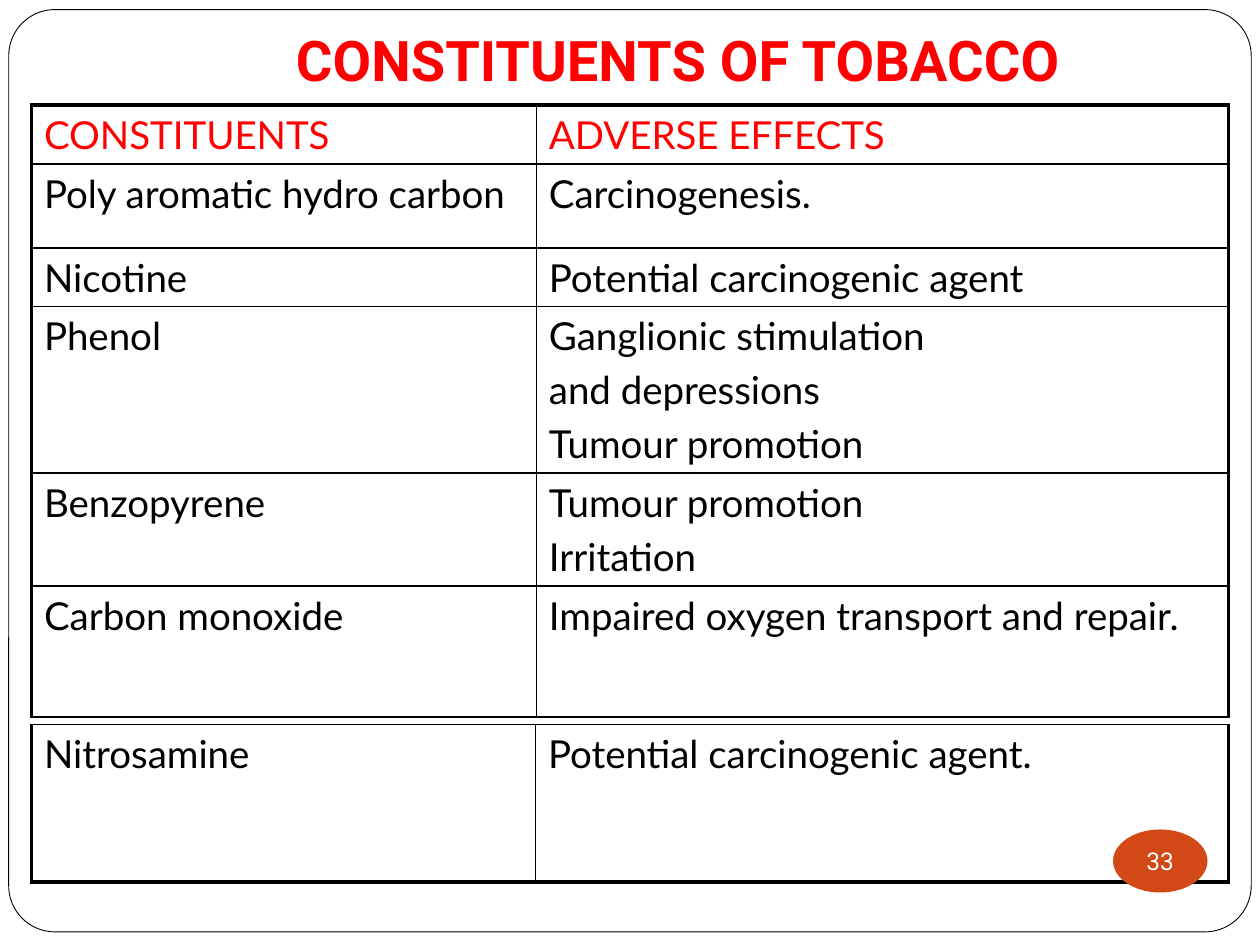
from lxml import etree
from pptx import Presentation
from pptx.dml.color import RGBColor
from pptx.enum.shapes import MSO_SHAPE
from pptx.enum.text import MSO_ANCHOR, MSO_AUTO_SIZE, PP_ALIGN
from pptx.oxml.ns import qn
from pptx.util import Pt

ROUNDED, OVAL = MSO_SHAPE.ROUNDED_RECTANGLE, MSO_SHAPE.OVAL
BOTTOM, MIDDLE = MSO_ANCHOR.BOTTOM, MSO_ANCHOR.MIDDLE
CENTER = PP_ALIGN.CENTER
NO_AUTOFIT = MSO_AUTO_SIZE.NONE

COLORS = {"paper": "FFFFFF", "ink": "000000", "heading": "FF0000", "badge": "D34817"}
HEADING_FONT, TABLE_FONT = "Roboto", "Lato"
OUTER, INNER = 2.25, 1

HEADER = ("CONSTITUENTS", ["ADVERSE EFFECTS"])
EFFECTS = [
    HEADER,
    ("Poly aromatic hydro carbon", ["Carcinogenesis."]),
    ("Nicotine", ["Potential carcinogenic agent"]),
    ("Phenol", ["Ganglionic stimulation", "and depressions", "Tumour promotion"]),
    ("Benzopyrene", ["Tumour promotion", "Irritation"]),
    ("Carbon monoxide", ["Impaired oxygen transport and repair."]),
]
LAST_EFFECT = [("Nitrosamine", ["Potential carcinogenic agent."])]


def color(name):
    return RGBColor.from_string(COLORS[name])


def style_font(font, face, size, color_name, bold=False):
    font.name, font.size, font.bold = face, Pt(size), bold
    font.color.rgb = color(color_name)


def add_frame(slide, left, top, width, height):
    """Rounded page border, placed behind everything else."""
    frame = slide.shapes.add_shape(ROUNDED, Pt(left), Pt(top), Pt(width), Pt(height))
    frame.adjustments[0] = 0.05
    frame.shadow.inherit = False
    frame.fill.solid()
    frame.fill.fore_color.rgb = color("paper")
    frame.line.color.rgb = color("ink")
    frame.line.width = Pt(0.5)
    slide.shapes.element.insert(2, frame.element)


def set_title(slide, left, top, width, height):
    title = slide.shapes.title
    title.left, title.top, title.width, title.height = Pt(left), Pt(top), Pt(width), Pt(height)
    text = title.text_frame
    text.auto_size = NO_AUTOFIT
    text.vertical_anchor = BOTTOM
    text.margin_left, text.margin_right = Pt(62), Pt(7.2)
    text.margin_top, text.margin_bottom = Pt(3.6), Pt(7.2)
    text.text = "CONSTITUENTS OF TOBACCO"
    text.paragraphs[0].alignment = CENTER
    style_font(text.paragraphs[0].font, HEADING_FONT, 32, "heading", bold=True)


def set_borders(cell, widths):
    """Border widths in points, in the order left, right, top, bottom."""
    properties = cell._tc.get_or_add_tcPr()
    for index, (side, width) in enumerate(zip("LRTB", widths)):
        border = etree.Element(qn(f"a:ln{side}"), w=str(Pt(width)))
        fill = etree.SubElement(border, qn("a:solidFill"))
        etree.SubElement(fill, qn("a:srgbClr"), val=COLORS["ink"])
        properties.insert(index, border)


def fill_cell(cell, lines, color_name):
    cell.fill.background()
    cell.text = "\n".join(lines)
    for number, paragraph in enumerate(cell.text_frame.paragraphs):
        style_font(paragraph.font, TABLE_FONT, 22, color_name)
        if number:
            paragraph.space_before = Pt(4.4)


def add_effects_table(slide, left, top, column_widths, row_heights, rows, thick_top, thick_bottom):
    table = slide.shapes.add_table(
        len(rows), 2, Pt(left), Pt(top), Pt(sum(column_widths)), Pt(sum(row_heights))
    ).table
    table.first_row = table.horz_banding = False
    for column, width in zip(table.columns, column_widths):
        column.width = Pt(width)
    last = len(rows) - 1
    for r, (constituent, effects) in enumerate(rows):
        table.rows[r].height = Pt(row_heights[r])
        color_name = "heading" if rows[r] is HEADER else "ink"
        above = OUTER if thick_top and r == 0 else INNER
        below = OUTER if thick_bottom and r == last else INNER
        for c, lines in enumerate(([constituent], effects)):
            cell = table.cell(r, c)
            fill_cell(cell, lines, color_name)
            sides = (INNER, OUTER) if c else (OUTER, INNER)
            set_borders(cell, (*sides, above, below))


def add_page_badge(slide, left, top, width, height):
    badge = slide.shapes.add_shape(OVAL, Pt(left), Pt(top), Pt(width), Pt(height))
    badge.shadow.inherit = False
    badge.fill.solid()
    badge.fill.fore_color.rgb = color("badge")
    badge.line.fill.background()
    text = badge.text_frame
    text.margin_left = text.margin_right = text.margin_top = text.margin_bottom = 0
    text.word_wrap = False
    text.vertical_anchor = MIDDLE
    text.text = "33"
    text.paragraphs[0].alignment = CENTER
    style_font(text.paragraphs[0].font, HEADING_FONT, 14, "paper")


def main():
    deck = Presentation()
    deck.slide_width, deck.slide_height = Pt(720), Pt(540)
    slide = deck.slides.add_slide(deck.slide_layouts[5])
    add_frame(slide, 5, 5.5, 710, 527)
    set_title(slide, 54, 18, 612, 42)
    add_effects_table(slide, 18, 60, (288.5, 395.5), (33.6, 48, 33.6, 95.2, 64.4, 75),
                      EFFECTS, thick_top=True, thick_bottom=False)
    add_effects_table(slide, 18, 414, (288, 396), (90,),
                      LAST_EFFECT, thick_top=False, thick_bottom=True)
    add_page_badge(slide, 636, 474, 54, 36)
    deck.save("out.pptx")


if __name__ == "__main__":
    main()
